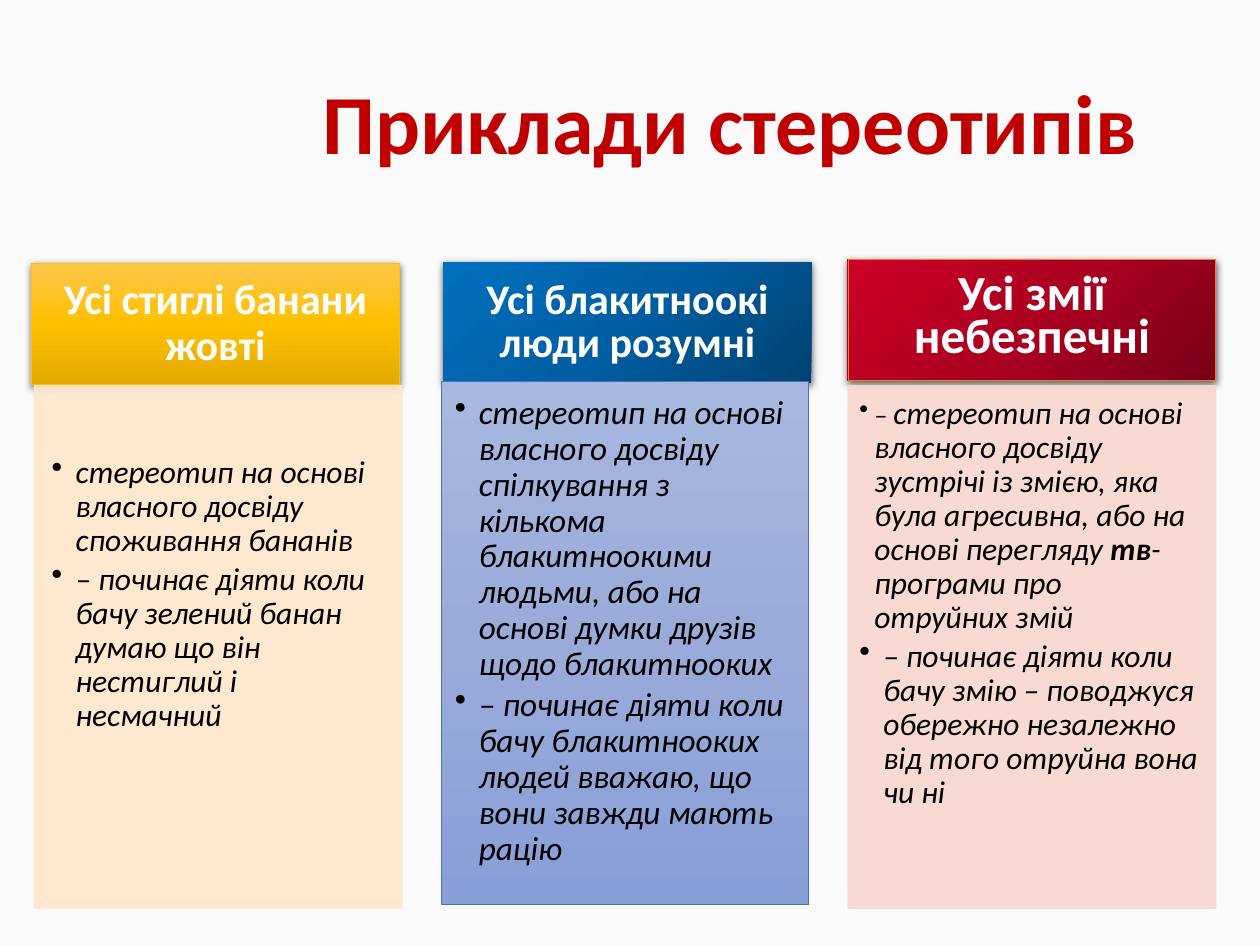
import copy

import pptx
import pptx.dml.color
import pptx.enum.shapes
import pptx.enum.text
import pptx.oxml.ns
import pptx.util
from lxml import etree

Inches = pptx.util.Inches
Pt = pptx.util.Pt
qn = pptx.oxml.ns.qn
PP_ALIGN = pptx.enum.text.PP_ALIGN
ANCHOR = pptx.enum.text.MSO_ANCHOR

COLUMN_WIDTH, HEADER_HEIGHT, BODY_HEIGHT = 2.92, 0.96, 4.15


def colour(value):
    return pptx.dml.color.RGBColor.from_string(value)


def add_child(parent, tag, **attributes):
    """Append an XML element such as a:buChar and return it."""
    child = etree.SubElement(parent, qn(tag))
    for name, value in attributes.items():
        child.set(name, str(value))
    return child


class SlideBuilder:
    font = "Calibri"

    def __init__(self, slide):
        self.slide = slide

    def background(self, value):
        fill = self.slide.background.fill
        fill.solid()
        fill.fore_color.rgb = colour(value)

    def text(self, para, text, size, color, bold=False, italic=False):
        span = para.add_run()
        span.text = text
        font = span.font
        font.name, font.size = self.font, Pt(size)
        font.bold, font.italic = bold, italic
        font.color.rgb = colour(color)
        return span

    def title(self, text, left, top, width, height):
        box = self.slide.shapes.add_textbox(
            Inches(left), Inches(top), Inches(width), Inches(height))
        frame = box.text_frame
        frame.word_wrap = False
        frame.auto_size = pptx.enum.text.MSO_AUTO_SIZE.SHAPE_TO_FIT_TEXT
        span = self.text(frame.paragraphs[0], text, 48, "C00000", bold=True)
        outline = etree.Element(qn("a:ln"), w=str(Pt(0.75)))
        add_child(add_child(outline, "a:solidFill"), "a:srgbClr", val="FFFFFF")
        span.font._element.insert(0, outline)

    def panel(self, left, top, height, fill, line, insets, angle=90):
        """Draw a rectangle; a list of three fill colours makes a gradient."""
        box = self.slide.shapes.add_shape(
            pptx.enum.shapes.MSO_SHAPE.RECTANGLE, Inches(left), Inches(top),
            Inches(COLUMN_WIDTH), Inches(height))
        box.shadow.inherit = False
        if isinstance(fill, list):
            self.gradient(box, fill, angle)
        else:
            box.fill.solid()
            box.fill.fore_color.rgb = colour(fill)
        if line:
            box.line.color.rgb = colour(line)
            box.line.width = Pt(0.5)
        else:
            box.line.fill.background()
        if not isinstance(fill, list):
            for color in box.element.spPr.iter(qn("a:srgbClr")):
                add_child(color, "a:alpha", val=90000)
        frame = box.text_frame
        frame.word_wrap = True
        (frame.margin_left, frame.margin_top,
         frame.margin_right, frame.margin_bottom) = map(Inches, insets)
        return box

    def gradient(self, box, colours, angle):
        box.fill.gradient()
        box.fill.gradient_angle = 360 - angle
        stops = box.element.spPr.find(".//" + qn("a:gsLst"))
        stops.insert(1, copy.deepcopy(stops[0]))
        for stop, value, position in zip(
                box.fill.gradient_stops, colours, (0, 0.5, 1)):
            stop.color.rgb = colour(value)
            stop.position = position

    def header(self, left, top, lines, size, spacing, fill, line, angle, insets):
        box = self.panel(left, top, HEADER_HEIGHT, fill, line, insets, angle)
        effects = box.element.spPr.find(qn("a:effectLst"))
        shadow = add_child(effects, "a:outerShdw", blurRad=Pt(4.5),
                           dist=Pt(1.5), dir=5400000, rotWithShape=0)
        black = add_child(shadow, "a:srgbClr", val="000000")
        add_child(black, "a:alpha", val=63000)
        frame = box.text_frame
        frame.vertical_anchor = ANCHOR.MIDDLE
        for index, text in enumerate(lines):
            para = frame.add_paragraph() if index else frame.paragraphs[0]
            para.alignment = PP_ALIGN.CENTER
            para.line_spacing = spacing
            self.text(para, text, size, "FFFFFF", bold=True)

    def body(self, left, top, items, size, fill, line, insets):
        """Fill a panel with bullets, each an indent and its (text, format) spans."""
        box = self.panel(left, top, BODY_HEIGHT, fill, line, insets)
        frame = box.text_frame
        frame.vertical_anchor = ANCHOR.TOP
        for index, (indent, spans) in enumerate(items):
            para = frame.add_paragraph() if index else frame.paragraphs[0]
            para.level = 1
            para.alignment = PP_ALIGN.LEFT
            para.line_spacing = 0.9
            para.space_after = Pt(size * 0.15)
            properties = para._p.get_or_add_pPr()
            properties.set("marL", str(Inches(indent)))
            properties.set("indent", str(-Inches(indent)))
            add_child(properties, "a:buChar", char="•")
            for text, style in spans:
                self.text(para, text, **{"size": size, "color": "000000",
                                         "italic": True, **style})


def bullet(*spans, indent=0.19):
    return indent, [span if isinstance(span, tuple) else (span, {})
                    for span in spans]


def main():
    deck = pptx.Presentation()
    deck.slide_width, deck.slide_height = Inches(10), Inches(7.5)
    page = SlideBuilder(deck.slides.add_slide(deck.slide_layouts[6]))
    page.background("FAFAFA")

    page.header(6.73, 2.06, ["Усі змії", "небезпечні"], 28, Pt(25),
                ["790017", "AC0021", "CC0027"], "ED7D31", 225,
                (0.22, 0.12, 0.22, 0.12))
    page.body(6.73, 3.06, [
        bullet(("– ", {"size": 15}),
               "стереотип на основі власного досвіду зустрічі із змією, "
               "яка була агресивна, або на основі перегляду ",
               ("тв", {"bold": True}),
               "-програми про отруйних змій", indent=0.12),
        bullet("– починає діяти коли бачу змію – поводжуся обережно "
               "незалежно від того отруйна вона чи ні"),
    ], 18, "F8D7CE", "F8D7CE", (0.09, 0.09, 0.12, 0.13))

    page.header(3.52, 2.08, ["Усі блакитноокі люди розумні"], 24, Pt(25),
                ["004272", "005EA2", "0070C0"], None, 225,
                (0.19, 0.11, 0.19, 0.11))
    page.body(3.5, 3.03, [
        bullet("стереотип на основі власного досвіду спілкування з кількома "
               "блакитноокими людьми, або на основі думки друзів щодо "
               "блакитнооких"),
        bullet("– починає діяти коли бачу блакитнооких людей вважаю, "
               "що вони завжди мають рацію"),
    ], 19, ["A8B7DF", "9AABD9", "889ED7"], "4472C4", (0.11, 0.11, 0.15, 0.17))

    page.header(0.25, 2.09, ["Усі стиглі банани жовті"], 24, 0.9,
                ["FFC64B", "FFC000", "E3AB00"], "FFC000", 90,
                (0.19, 0.11, 0.19, 0.11))
    page.body(0.27, 3.06, [
        bullet("стереотип на основі власного досвіду споживання бананів"),
        bullet("– починає діяти коли бачу зелений банан думаю що він "
               "нестиглий і несмачний"),
    ], 18, "FFE8CC", "FFE8CC", (0.14, 0.56, 0.19, 0.21))

    page.title("Приклади стереотипів", 2.46, 0.51, 6.74, 0.91)
    deck.save("out.pptx")


if __name__ == "__main__":
    main()
